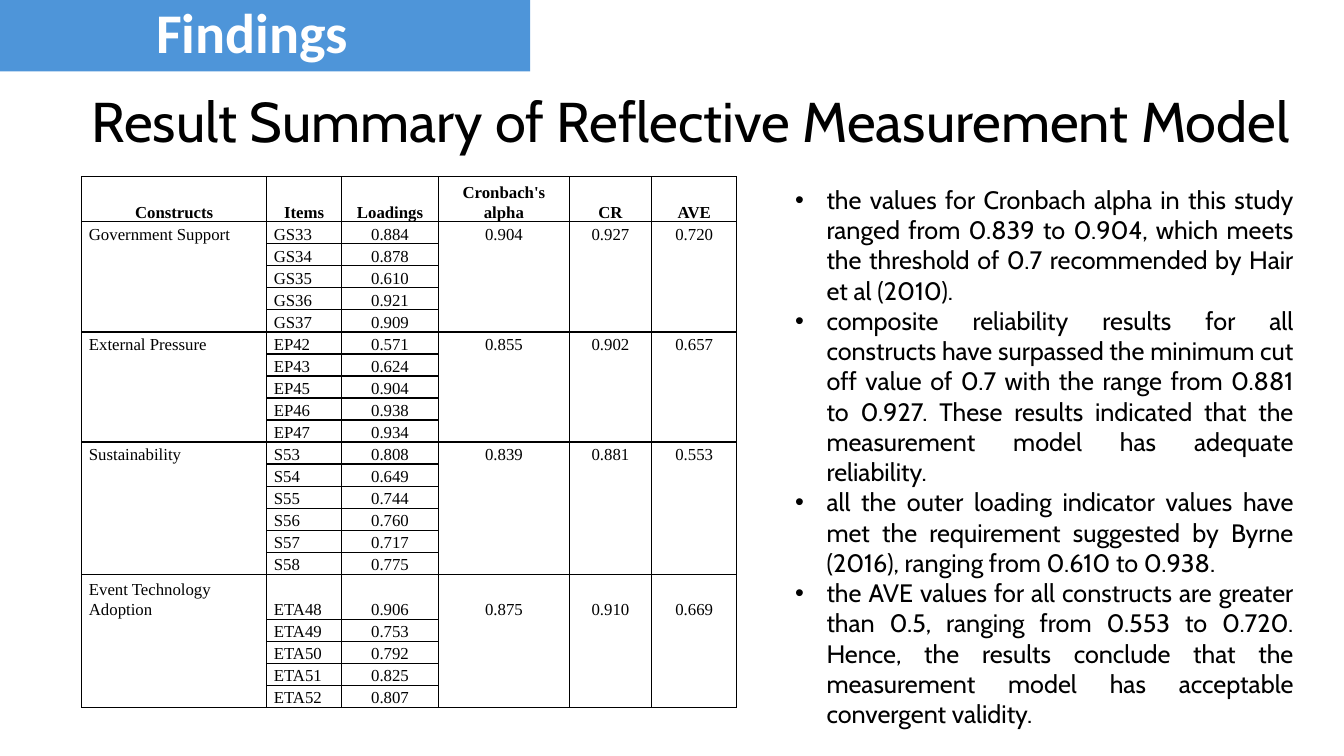
from lxml.etree import SubElement
from pptx import Presentation
from pptx.dml.color import RGBColor
from pptx.enum.shapes import MSO_SHAPE
from pptx.enum.text import MSO_ANCHOR, MSO_AUTO_SIZE, PP_ALIGN
from pptx.oxml.ns import qn
from pptx.util import Cm, Pt

COLORS = {"ink": "000000", "banner": "4E95D9", "banner_text": "FFFFFF"}

HEADINGS = ["Constructs", "Items", "Loadings", "Cronbach's alpha", "CR", "AVE"]
COLUMN_WIDTHS = [4.66, 1.89, 2.44, 3.3, 2.07, 2.15]
TALL_ROW = 1.14
# construct, (Cronbach's alpha, CR, AVE), {item: loading}
CONSTRUCTS = [
    ("Government Support", ("0.904", "0.927", "0.720"),
     {"GS33": "0.884", "GS34": "0.878", "GS35": "0.610", "GS36": "0.921",
      "GS37": "0.909"}),
    ("External Pressure", ("0.855", "0.902", "0.657"),
     {"EP42": "0.571", "EP43": "0.624", "EP45": "0.904", "EP46": "0.938",
      "EP47": "0.934"}),
    ("Sustainability", ("0.839", "0.881", "0.553"),
     {"S53": "0.808", "S54": "0.649", "S55": "0.744", "S56": "0.760",
      "S57": "0.717", "S58": "0.775"}),
    ("Event Technology Adoption", ("0.875", "0.910", "0.669"),
     {"ETA48": "0.906", "ETA49": "0.753", "ETA50": "0.792", "ETA51": "0.825",
      "ETA52": "0.807"}),
]
FINDINGS = [
    "the values for Cronbach alpha in this study ranged from 0.839 to 0.904, "
    "which meets the threshold of 0.7 recommended by Hair et al (2010).",
    "composite reliability results for all constructs have surpassed the "
    "minimum cut off value of 0.7 with the range from 0.881 to 0.927. These "
    "results indicated that the measurement model has adequate reliability.",
    "all the outer loading indicator values have met the requirement suggested "
    "by Byrne (2016), ranging from 0.610 to 0.938.",
    "the AVE values for all constructs are greater than 0.5, ranging from 0.553 "
    "to 0.720. Hence, the results conclude that the measurement model has "
    "acceptable convergent validity.",
]


def set_font(paragraph, name, size, color="ink", bold=False):
    font = paragraph.font
    font.name, font.size, font.bold = name, Pt(size), bold
    font.color.rgb = RGBColor.from_string(COLORS[color])


def add_banner(slide, left, top, width, height):
    banner = slide.shapes.add_shape(
        MSO_SHAPE.RECTANGLE, Cm(left), Cm(top), Cm(width), Cm(height))
    banner.shadow.inherit = False
    banner.fill.solid()
    banner.fill.fore_color.rgb = RGBColor.from_string(COLORS["banner"])
    banner.line.fill.background()
    frame = banner.text_frame
    frame.vertical_anchor = MSO_ANCHOR.MIDDLE
    frame.margin_right = Cm(0.9)
    label = frame.paragraphs[0]
    label.text = "Findings"
    label.alignment = PP_ALIGN.CENTER
    label.line_spacing = 0.9
    set_font(label, "Calibri", 40, "banner_text", bold=True)


def add_title(slide, left, top, width, height):
    frame = slide.shapes.add_textbox(
        Cm(left), Cm(top), Cm(width), Cm(height)).text_frame
    frame.word_wrap = True
    frame.vertical_anchor = MSO_ANCHOR.MIDDLE
    title = frame.paragraphs[0]
    title.text = "Result Summary of Reflective Measurement Model"
    title.line_spacing = 0.9
    set_font(title, "Cabin", 40)


def set_borders(cell, top, bottom):
    """Rule both sides of the cell, and its top and bottom where asked."""
    properties = cell._tc.get_or_add_tcPr()
    for side, ruled in (("L", True), ("R", True), ("T", top), ("B", bottom)):
        line = SubElement(properties, qn(f"a:ln{side}"), w=str(Pt(1)))
        if ruled:
            fill = SubElement(line, qn("a:solidFill"))
            SubElement(fill, qn("a:srgbClr"), val=COLORS["ink"])
        else:
            SubElement(line, qn("a:noFill"))


def fill_cell(cell, text, centered, bold=False, top=True, bottom=True):
    set_borders(cell, top, bottom)
    cell.fill.background()
    cell.vertical_anchor = MSO_ANCHOR.BOTTOM
    cell.margin_left = cell.margin_right = Cm(0.18)
    cell.margin_top = cell.margin_bottom = 0
    paragraph = cell.text_frame.paragraphs[0]
    if not text:
        # An empty cell takes its line height from the end mark
        SubElement(paragraph._p, qn("a:endParaRPr"), sz="1200")
        return
    paragraph.text = text
    paragraph.alignment = PP_ALIGN.CENTER if centered else PP_ALIGN.LEFT
    paragraph.line_spacing = 1.07
    paragraph.space_after = Pt(8)
    set_font(paragraph, "Times New Roman", 12, bold=bold)


def add_results_table(slide, left, top, height):
    row_count = 1 + sum(len(items) for _, _, items in CONSTRUCTS)
    table = slide.shapes.add_table(
        row_count, len(HEADINGS), Cm(left), Cm(top),
        Cm(sum(COLUMN_WIDTHS)), Cm(height)).table
    table.first_row = table.horz_banding = False
    for column, width in zip(table.columns, COLUMN_WIDTHS):
        column.width = Cm(width)
    last_block = row_count - len(CONSTRUCTS[-1][2])
    tall_rows = (0, last_block)
    low_row = (height - TALL_ROW * len(tall_rows)) / (row_count - len(tall_rows))
    for index, row in enumerate(table.rows):
        row.height = Cm(TALL_ROW if index in tall_rows else low_row)

    for column, heading in enumerate(HEADINGS):
        fill_cell(table.cell(0, column), heading, centered=True, bold=True)
    row = 1
    for construct, measures, items in CONSTRUCTS:
        for position, (item, loading) in enumerate(items.items()):
            first, last = position == 0, position == len(items) - 1
            values = [construct, item, loading, *measures]
            for column, value in enumerate(values):
                per_item = column in (1, 2)
                fill_cell(table.cell(row, column),
                          value if per_item or first else "",
                          centered=column > 1,
                          top=per_item or first, bottom=per_item or last)
            row += 1


def add_findings(slide, left, top, width, height):
    frame = slide.shapes.add_textbox(
        Cm(left), Cm(top), Cm(width), Cm(height)).text_frame
    frame.word_wrap = True
    frame.auto_size = MSO_AUTO_SIZE.SHAPE_TO_FIT_TEXT
    for index, finding in enumerate(FINDINGS):
        paragraph = frame.add_paragraph() if index else frame.paragraphs[0]
        paragraph.text = finding
        paragraph.alignment = PP_ALIGN.JUSTIFY
        properties = paragraph._p.get_or_add_pPr()
        properties.set("marL", str(Cm(0.79)))
        properties.set("indent", str(-Cm(0.79)))
        SubElement(properties, qn("a:buFont"), typeface="Arial")
        SubElement(properties, qn("a:buChar"), char="•")
        set_font(paragraph, "Cabin", 18)


def main():
    deck = Presentation()
    deck.slide_width, deck.slide_height = Cm(33.87), Cm(19.05)
    slide = deck.slides.add_slide(deck.slide_layouts[6])
    add_title(slide, 2.06, 1.3, 32.28, 3.68)
    add_results_table(slide, 2.06, 4.45, 13.39)
    add_findings(slide, 19.79, 4.52, 13.06, 14.88)
    add_banner(slide, 0, 0, 13.36, 1.8)
    deck.save("out.pptx")


if __name__ == "__main__":
    main()
